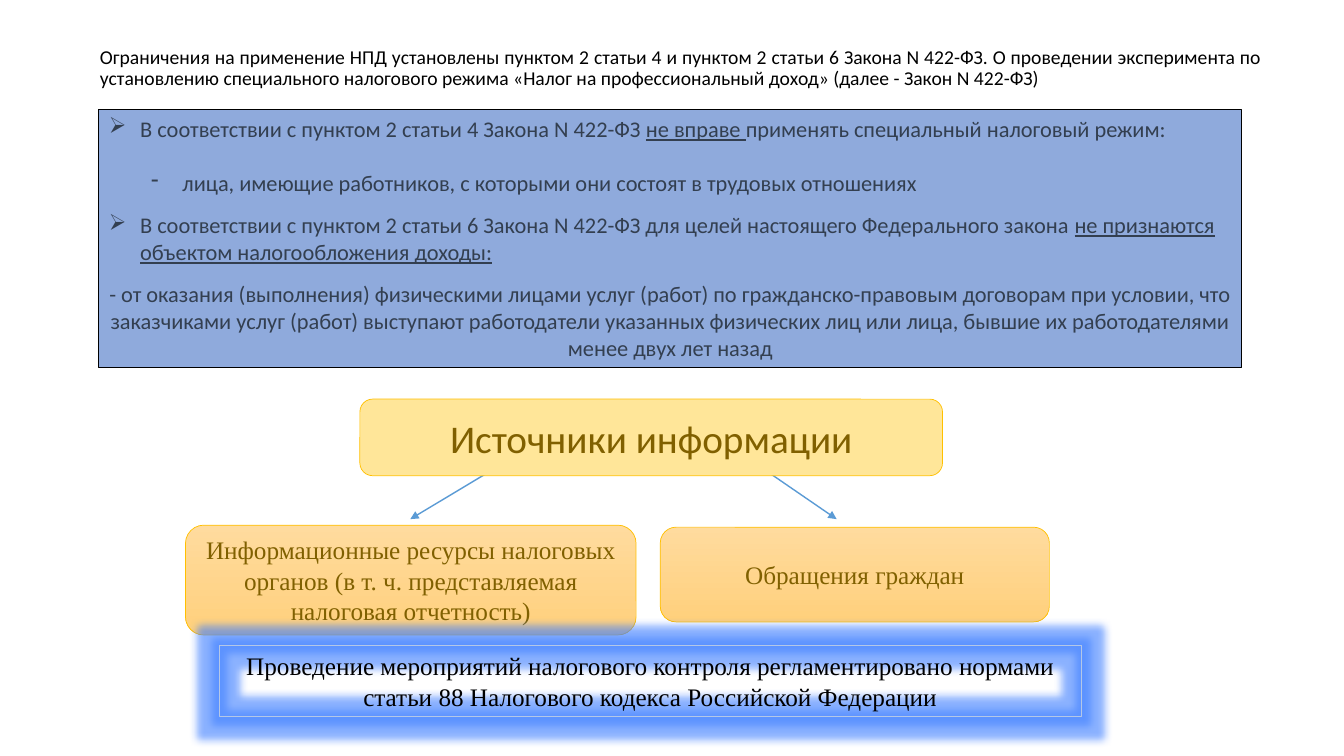
from lxml.etree import SubElement
from pptx import Presentation
from pptx.dml.color import RGBColor
from pptx.enum.shapes import MSO_CONNECTOR, MSO_SHAPE
from pptx.enum.text import MSO_ANCHOR, MSO_AUTO_SIZE, PP_ALIGN
from pptx.oxml.ns import qn
from pptx.util import Inches, Pt

COLORS = {
    "black": "000000", "slate": "333F50", "brown": "806000", "blue": "8FAADC",
    "pale blue": "B4C7E7", "arrow": "5B9BD5", "glow": "3F7FFF", "gold": "FFC000",
    "cream": "FFE699", "peach": "FFDB9E", "orange": "FFD07C",
}
SANS, SERIF = "Calibri", "Times New Roman"


def color(name):
    return RGBColor.from_string(COLORS[name])


class Page:
    """A slide on a grid of 100 columns by 100 rows."""

    def __init__(self, deck):
        self.column = deck.slide_width / 100
        self.row = deck.slide_height / 100
        self.slide = deck.slides.add_slide(deck.slide_layouts[1])

    def point(self, column, row):
        return round(column * self.column), round(row * self.row)

    def area(self, left, top, width, height):
        return *self.point(left, top), *self.point(width, height)

    def place(self, holder, area):
        holder.left, holder.top, holder.width, holder.height = self.area(*area)

    def set_frame(self, shape, anchor):
        frame = shape.text_frame
        frame.word_wrap = True
        frame.auto_size = MSO_AUTO_SIZE.NONE
        frame.vertical_anchor = anchor
        return frame

    def add_spans(self, para, spans, font, size, ink, align=PP_ALIGN.CENTER):
        """Add (text, underlined) spans to a paragraph."""
        para.alignment = align
        for text, underlined in spans:
            span = para.add_run()
            span.text = text
            span.font.name, span.font.size = font, Pt(size)
            span.font.color.rgb = color(ink)
            span.font.bold = False
            span.font.underline = underlined

    def outline(self, shape, name, width):
        shape.line.color.rgb = color(name)
        shape.line.width = Pt(width)

    def title(self, area, text):
        holder = self.slide.shapes.title
        self.place(holder, area)
        para = self.set_frame(holder, MSO_ANCHOR.MIDDLE).paragraphs[0]
        para.line_spacing = 0.9
        self.add_spans(para, [(text, False)], SANS, 14, "black", PP_ALIGN.JUSTIFY)

    def rules(self, area, items):
        """Fill the body with (bullet, indent, space before, spans) items."""
        holder = self.slide.placeholders[1]
        self.place(holder, area)
        holder.fill.solid()
        holder.fill.fore_color.rgb = color("blue")
        self.outline(holder, "black", 0.5)
        frame = self.set_frame(holder, MSO_ANCHOR.TOP)
        for index, (bullet, indent, gap, spans) in enumerate(items):
            para = frame.add_paragraph() if index else frame.paragraphs[0]
            para.line_spacing, para.space_before, para.space_after = 1.0, Pt(gap), Pt(0)
            align = PP_ALIGN.LEFT if bullet else PP_ALIGN.CENTER
            self.add_spans(para, spans, SANS, 16, "slate", align)
            props = para._p.get_or_add_pPr()
            props.set("marL", str(Inches(indent)))
            props.set("indent", str(Inches(-0.31 if bullet else 0)))
            if bullet:
                SubElement(props, qn("a:buFontTx"))
                SubElement(props, qn("a:buChar")).set("char", bullet)
            else:
                SubElement(props, qn("a:buNone"))

    def box(self, area, text, fills, line, font=SERIF, size=18, ink="brown",
            preset=MSO_SHAPE.ROUNDED_RECTANGLE, line_width=0.5):
        """Draw a text box with no fill, one fill colour or a vertical gradient."""
        shape = self.slide.shapes.add_shape(preset, *self.area(*area))
        shape.shadow.inherit = False
        if not fills:
            shape.fill.background()
        elif len(fills) == 1:
            shape.fill.solid()
            shape.fill.fore_color.rgb = color(fills[0])
        else:
            shape.fill.gradient()
            shape.fill.gradient_angle = 270
            for stop, name in zip(shape.fill.gradient_stops, fills):
                stop.color.rgb = color(name)
        self.outline(shape, line, line_width)
        para = self.set_frame(shape, MSO_ANCHOR.MIDDLE).paragraphs[0]
        self.add_spans(para, [(text, False)], font, size, ink)
        return shape

    def glow(self, shape, radius, opacity):
        effects = shape._element.spPr.find(qn("a:effectLst"))
        halo = SubElement(effects, qn("a:glow"), rad=str(Pt(radius)))
        tint = SubElement(halo, qn("a:srgbClr"), val=COLORS["glow"])
        SubElement(tint, qn("a:alpha"), val=str(opacity * 1000))

    def arrow(self, start, end):
        line = self.slide.shapes.add_connector(
            MSO_CONNECTOR.STRAIGHT, *self.point(*start), *self.point(*end))
        self.outline(line, "arrow", 1)
        props = line._element.spPr
        SubElement(props.find(qn("a:ln")), qn("a:tailEnd"), type="triangle")
        SubElement(props, qn("a:effectLst"))


def main():
    deck = Presentation()
    deck.slide_width, deck.slide_height = Inches(13.33), Inches(7.5)
    page = Page(deck)

    page.title((6.68, 3.73, 88, 10.67),
               "Ограничения на применение НПД установлены пунктом 2 статьи 4 и пунктом 2 "
               "статьи 6 Закона N 422-ФЗ. О проведении эксперимента по установлению "
               "специального налогового режима «Налог на профессиональный доход» "
               "(далее - Закон N 422-ФЗ)")

    for area, text in (
        ((13.8, 69.47, 33.53, 14.53),
         "Информационные ресурсы налоговых органов (в т. ч. представляемая "
         "налоговая отчетность)"),
        ((49.13, 69.73, 28.95, 12.53), "Обращения граждан"),
    ):
        page.box(area, text, ["peach", "orange"], "gold")

    control = page.box((16.28, 85.33, 64.2, 9.47),
                       "Проведение мероприятий налогового контроля регламентировано "
                       "нормами статьи 88 Налогового кодекса Российской Федерации",
                       [], "pale blue", ink="black", preset=MSO_SHAPE.RECTANGLE,
                       line_width=0.25)
    page.glow(control, 11, 60)

    page.rules((7.35, 14.53, 85.05, 34.13), [
        ("➢", 0.31, 0, [
            ("В соответствии с пунктом 2 статьи 4 Закона N 422-ФЗ ", False),
            ("не вправе ", True),
            ("применять специальный налоговый режим:", False)]),
        ("-", 0.73, 19.5, [
            ("лица, имеющие работников, с которыми они состоят в трудовых "
             "отношениях", False)]),
        ("➢", 0.31, 11, [
            ("В соответствии с пунктом 2 статьи 6 Закона N 422-ФЗ для целей "
             "настоящего Федерального закона ", False),
            ("не признаются объектом налогообложения доходы:", True)]),
        (None, 0, 11, [
            ("- от оказания (выполнения) физическими лицами услуг (работ) по "
             "гражданско-правовым договорам при условии, что заказчиками услуг "
             "(работ) выступают работодатели указанных физических лиц или лица, "
             "бывшие их работодателями менее двух лет назад", False)]),
    ])

    for start, end in ((39.53, 30.53), (54.38, 62.25)):
        page.arrow((start, 59.07), (end, 68.67))
    page.box((26.78, 52.8, 43.35, 10.13), "Источники информации", ["cream"], "gold",
             font=SANS, size=28)

    deck.save("out.pptx")


if __name__ == "__main__":
    main()
